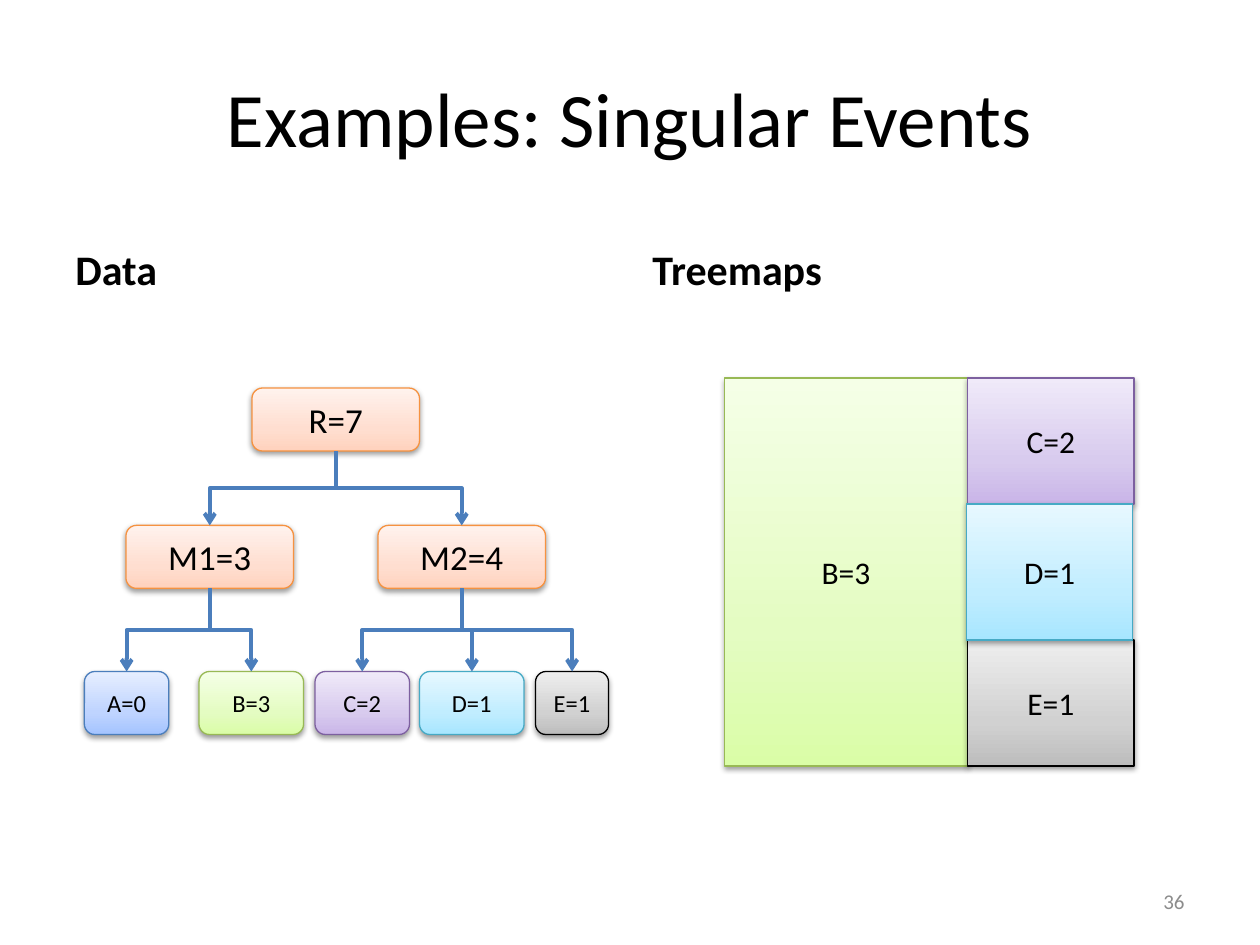
from copy import deepcopy

from lxml import etree
from pptx import Presentation
from pptx.dml.color import RGBColor
from pptx.enum.shapes import MSO_CONNECTOR as Link, MSO_SHAPE as Shape
from pptx.enum.text import MSO_ANCHOR as Anchor, PP_ALIGN as Align
from pptx.oxml.ns import qn
from pptx.util import Inches, Pt

COLORS = {"text": "000000", "number": "8C8C8C", "arrow": "4B7EBC"}

# Each look: outline, then gradient colours from bottom to top
LOOKS = {
    "orange": ("F69240", "FFD2BD", "FFDED0", "FFF2ED"),
    "blue": ("4B7EBC", "A4C4FF", "BFD4FF", "E6EEFF"),
    "green": ("98B955", "DAFDA7", "E4FCC2", "F5FFE7"),
    "purple": ("7D60A0", "C9B5E8", "D8CBEE", "F0EAF9"),
    "aqua": ("46AAC5", "A7E6FF", "C1EDFF", "E7F8FF"),
    "gray": ("000000", "BDBDBD", "D1D1D1", "EEEEEE"),
}
STOPS = (0, 0.35, 1)


def rgb(value):
    return RGBColor.from_string(value)


class SlideBuilder:
    font = "Calibri"

    def __init__(self, deck):
        self.page = deck.slides.add_slide(deck.slide_layouts[5])

    def fill_text(self, box, text, size, color="text", bold=False,
                  align=Align.CENTER, anchor=Anchor.MIDDLE):
        frame = box.text_frame
        frame.word_wrap = True
        frame.vertical_anchor = anchor
        para = frame.paragraphs[0]
        para.alignment = align
        span = para.add_run()
        span.text = text
        formats = {"name": self.font, "size": Pt(size), "bold": bold}
        for name, value in formats.items():
            setattr(span.font, name, value)
        span.font.color.rgb = rgb(COLORS[color])

    def title(self, text, *place):
        box = self.page.shapes.title
        sides = zip(("left", "top", "width", "height"), place)
        for name, value in sides:
            setattr(box, name, Inches(value))
        self.fill_text(box, text, 44)

    def label(self, text, place, size, **style):
        box = self.page.shapes.add_textbox(*map(Inches, place))
        self.fill_text(box, text, size, **style)

    def block(self, text, place, look, size, kind=Shape.ROUNDED_RECTANGLE):
        box = self.page.shapes.add_shape(kind, *map(Inches, place))
        outline, *shades = LOOKS[look]
        box.line.color.rgb = rgb(outline)
        box.line.width = Pt(0.75)
        self.shade(box, shades)
        self.cast_shadow(box)
        self.fill_text(box, text, size)
        return box

    def shade(self, box, shades):
        box.fill.gradient()
        box.fill.gradient_angle = 90
        stop_list = box._element.spPr.find(".//" + qn("a:gsLst"))
        stop_list.append(deepcopy(stop_list[0]))
        for stop, position, color in zip(box.fill.gradient_stops, STOPS, shades):
            stop.position = position
            stop.color.rgb = rgb(color)

    def cast_shadow(self, box):
        box.shadow.inherit = False
        effects = box._element.spPr.find(qn("a:effectLst"))
        outer = etree.SubElement(effects, qn("a:outerShdw"), blurRad="40000",
                                 dist="20000", dir="5400000", rotWithShape="0")
        color = etree.SubElement(outer, qn("a:srgbClr"), val="000000")
        etree.SubElement(color, qn("a:alpha"), val="38000")

    def branch(self, parent, child):
        x1, y1 = parent.left + parent.width // 2, parent.top + parent.height
        x2, y2 = child.left + child.width // 2, child.top
        link = self.page.shapes.add_connector(Link.ELBOW, x1, y1, x2, y2)
        link.begin_connect(parent, 2)
        link.end_connect(child, 0)
        # The elbow leaves downwards, so its frame is turned a quarter
        run, drop = abs(x2 - x1), y2 - y1
        frame = {"left": (x1 + x2 - drop) // 2, "top": (y1 + y2 - run) // 2,
                 "width": drop, "height": run}
        for name, value in frame.items():
            setattr(link, name, value)
        rightward = x2 > x1
        properties = link._element.spPr
        turn = properties.find(qn("a:xfrm"))
        turn.set("rot", "16200000" if rightward else "5400000")
        turn.set("flipH", "1" if rightward else "0")
        link.line.color.rgb = rgb(COLORS["arrow"])
        link.line.width = Pt(2.25)
        etree.SubElement(properties.find(qn("a:ln")), qn("a:tailEnd"), type="arrow")
        etree.SubElement(properties, qn("a:effectLst"))


def main():
    deck = Presentation()
    deck.slide_width, deck.slide_height = Inches(10), Inches(7.5)
    slide = SlideBuilder(deck)

    # Title, column headings and page number
    slide.title("Examples: Singular Events", 0.5, 0.3, 9, 1.25)
    for text, left in (("Data", 0.5), ("Treemaps", 5.08)):
        slide.label(text, (left, 1.68, 4.42, 0.7), 24, bold=True,
                    align=Align.LEFT, anchor=Anchor.BOTTOM)
    slide.label("36", (7.17, 6.95, 2.33, 0.4), 12, color="number",
                align=Align.RIGHT)

    # Data tree: root, middle nodes and leaves
    root, left_node, right_node = [
        slide.block(text, (left, top, 1.33, 0.5), "orange", 20)
        for text, left, top in (("R=7", 2, 3.08), ("M1=3", 1, 4.17),
                                ("M2=4", 3, 4.17))
    ]
    leaves = [
        slide.block(text, (left, 5.33, width, 0.5), look, 14)
        for text, left, width, look in (
            ("A=0", 0.67, 0.67, "blue"), ("B=3", 1.58, 0.83, "green"),
            ("C=2", 2.5, 0.75, "purple"), ("D=1", 3.33, 0.83, "aqua"),
            ("E=1", 4.25, 0.58, "gray"))
    ]
    families = ((root, (left_node, right_node)),
                (left_node, leaves[:2]), (right_node, leaves[2:]))
    for parent, children in families:
        for child in children:
            slide.branch(parent, child)

    # Treemap
    for text, place, look in (
            ("B=3", (5.75, 3, 1.93, 3.08), "green"),
            ("C=2", (7.68, 3, 1.32, 1), "purple"),
            ("E=1", (7.68, 5.08, 1.32, 1), "gray"),
            ("D=1", (7.67, 4, 1.32, 1.08), "aqua")):
        slide.block(text, place, look, 18, Shape.RECTANGLE)

    deck.save("out.pptx")


if __name__ == "__main__":
    main()
